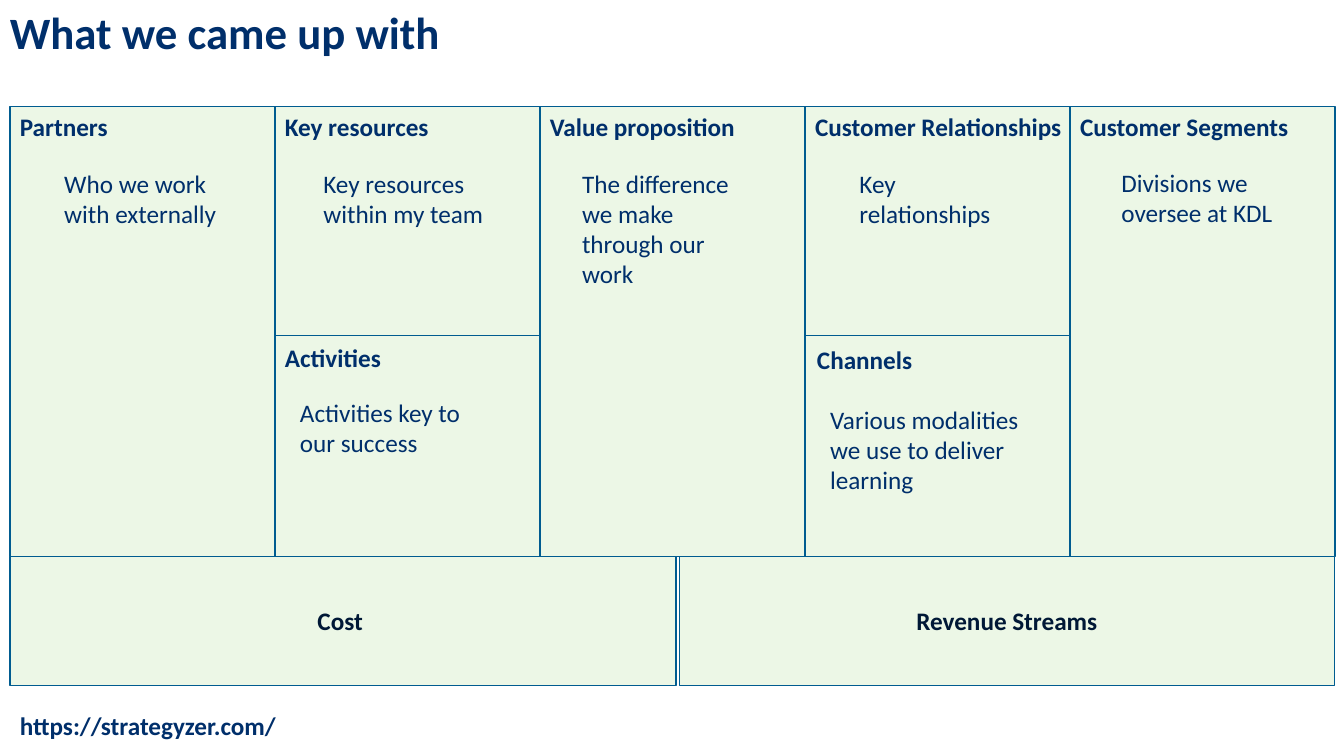
"""Build a one-slide business model canvas."""
from dataclasses import dataclass

from pptx import Presentation
from pptx.dml.color import RGBColor
from pptx.enum.shapes import MSO_SHAPE
from pptx.enum.text import MSO_ANCHOR, MSO_AUTO_SIZE, PP_ALIGN
from pptx.util import Cm, Pt

RECT = MSO_SHAPE.RECTANGLE
MIDDLE = MSO_ANCHOR.MIDDLE
GROW = MSO_AUTO_SIZE.SHAPE_TO_FIT_TEXT
CENTER = PP_ALIGN.CENTER


@dataclass(frozen=True)
class Theme:
    """Hold the colours, font and type sizes."""
    fill: str = "ECF7E6"
    edge: str = "005C90"
    navy: str = "002F6B"
    dark: str = "001836"
    font: str = "Calibri"
    title: int = 32
    text: int = 18


THEME = Theme()

TITLE = "What we came up with"
SITE = "https://strategyzer.com/"

# column, row span, heading, heading size and shift, note, note size and shift
CELLS = [
    (0, "full", "Partners", (5.66, 1.02), (0, 0),
     "Who we work with externally", (4.6, 1.8), (1.12, 1.42)),
    (1, "low", "Activities", (5.16, 1.02), (0, 0.05),
     "Activities key to our success", (5.26, 1.8), (0.38, 1.42)),
    (2, "full", "Value proposition", (5.66, 1.02), (0, 0),
     "The difference we make through our work", (4.6, 3.33), (0.81, 1.42)),
    (4, "full", "Customer Segments", (7.09, 1.02), (0, 0),
     "Divisions we oversee at KDL", (4.6, 1.8), (1.04, 1.4)),
    (1, "high", "Key resources", (5.66, 1.02), (0, 0),
     "Key resources within my team", (4.6, 1.8), (0.97, 1.42)),
    (3, "low", "Channels", (5.16, 1.02), (0.05, 0.1),
     "Various modalities we use to deliver learning", (5.26, 2.57), (0.38, 1.6)),
    (3, "high", "Customer Relationships", (7.09, 1.02), (0, 0),
     "Key relationships", (4.6, 1.8), (1.12, 1.42)),
]
FOOT = [("Cost ", 0.25, 16.79), ("Revenue Streams", 17.12, 16.51)]

LEFT, TOP, WIDE = 0.25, 2.69, 6.68
HIGH, LOW, BASE = 5.77, 5.56, 3.25
ROWS = {
    "full": (TOP, HIGH + LOW),
    "high": (TOP, HIGH),
    "low": (TOP + HIGH, LOW),
}


def write(frame, text, size, color, bold):
    para = frame.paragraphs[0]
    run = para.add_run()
    run.text = text
    run.font.name = THEME.font
    run.font.size = Pt(size)
    run.font.bold = bold
    run.font.color.rgb = RGBColor.from_string(color)
    return para


def panel(slide, *box):
    shape = slide.shapes.add_shape(RECT, *map(Cm, box))
    shape.shadow.inherit = False
    shape.fill.solid()
    shape.fill.fore_color.rgb = RGBColor.from_string(THEME.fill)
    shape.line.color.rgb = RGBColor.from_string(THEME.edge)
    shape.line.width = Pt(1)
    return shape


def label(slide, text, box, size=THEME.text, bold=True):
    frame = slide.shapes.add_textbox(*map(Cm, box)).text_frame
    frame.word_wrap = True
    frame.auto_size = GROW
    write(frame, text, size, THEME.navy, bold)


def main():
    deck = Presentation()
    deck.slide_width, deck.slide_height = Cm(33.87), Cm(19.05)
    slide = deck.slides.add_slide(deck.slide_layouts[6])

    for col, row, *_ in CELLS:
        top, tall = ROWS[row]
        panel(slide, LEFT + col * WIDE, top, WIDE, tall)

    for col, row, head, area, shift, note, room, inset in CELLS:
        left, top = LEFT + col * WIDE, ROWS[row][0]
        label(slide, note, (left + inset[0], top + inset[1], *room), bold=False)
        label(slide, head, (left + shift[0], top + shift[1], *area))

    for text, left, wide in FOOT:
        frame = panel(slide, left, TOP + HIGH + LOW, wide, BASE).text_frame
        frame.vertical_anchor = MIDDLE
        write(frame, text, THEME.text, THEME.dark, True).alignment = CENTER

    label(slide, TITLE, (0, 0, 25.4, 1.63), THEME.title)
    label(slide, SITE, (0.25, 17.78, 19.56, 1.07))
    deck.save("out.pptx")


if __name__ == "__main__":
    main()
